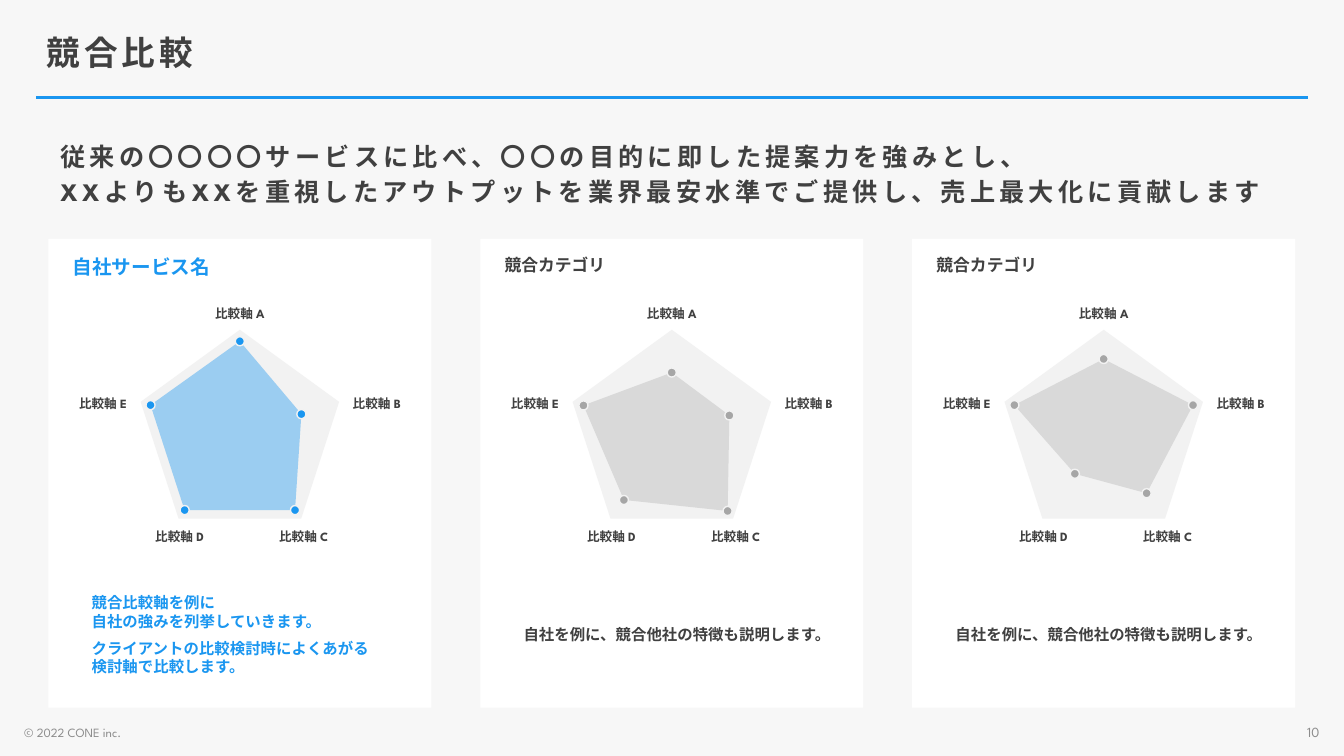
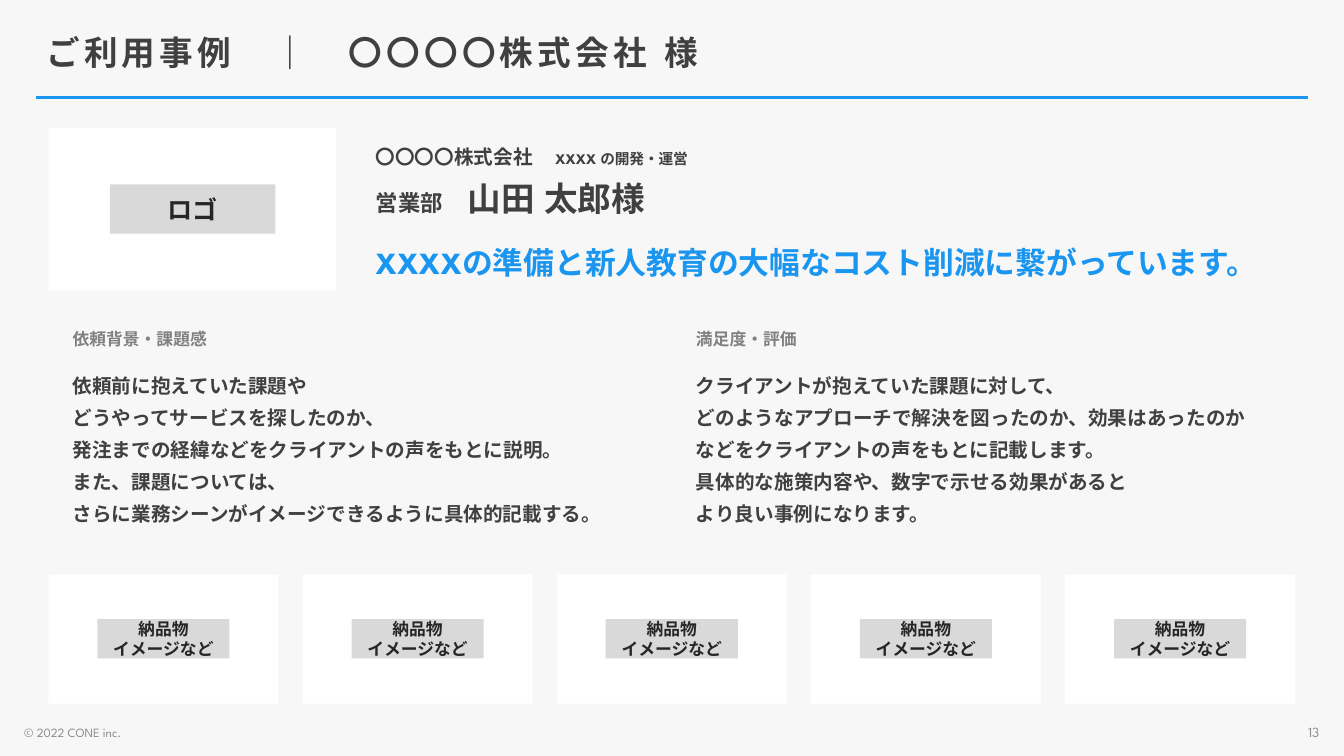
from dataclasses import dataclass
from math import cos, pi, sin

from lxml.etree import SubElement
from pptx import Presentation
from pptx.dml.color import RGBColor as RGB
from pptx.enum.shapes import MSO_CONNECTOR as Connector, MSO_SHAPE as Preset
from pptx.enum.text import MSO_ANCHOR as Anchor, PP_ALIGN as Align
from pptx.oxml.ns import qn
from pptx.util import Cm, Pt


@dataclass(frozen=True)
class Theme:
    font: str = "League Spartan"
    label_font: str = "Noto Sans CJK JP"
    background: RGB = RGB(0xF7, 0xF7, 0xF7)
    accent: RGB = RGB(0x1A, 0x96, 0xF0)
    text: RGB = RGB(0x40, 0x40, 0x40)
    label: RGB = RGB(0x26, 0x26, 0x26)
    heading: RGB = RGB(0x80, 0x80, 0x80)
    footer: RGB = RGB(0x8C, 0x8C, 0x8C)
    white: RGB = RGB(0xFF, 0xFF, 0xFF)
    pale: RGB = RGB(0xF2, 0xF2, 0xF2)
    gray: RGB = RGB(0xD9, 0xD9, 0xD9)
    dot: RGB = RGB(0xA6, 0xA6, 0xA6)
    title_size: float = 24
    message_size: float = 18
    lead_size: float = 22
    body_size: float = 14
    small_size: float = 12
    note_size: float = 11
    axis_size: float = 9
    page_size: float = 10


theme = Theme()


@dataclass
class Para:
    """A paragraph; text is a string, or a list of (text, size) runs."""
    text: str | list
    size: float = theme.body_size
    color: RGB = theme.text
    before: float = 0
    bold: bool = True
    font: str = theme.font
    tracking: float = 0
    line_spacing: float | None = None


def add_box(shapes, left, top, width, height, paragraphs=(), fill=None,
            margins=(0.25, 0.13, 0.25, 0.13), anchor=Anchor.MIDDLE,
            align=Align.LEFT, preset=Preset.RECTANGLE):
    """Add a preset shape, or a text box when there is no fill. Lengths in cm."""
    frame = [Cm(length) for length in (left, top, width, height)]
    if fill is None:
        shape = shapes.add_textbox(*frame)
    else:
        shape = shapes.add_shape(preset, *frame)
        shape.shadow.inherit = False
        shape.fill.solid()
        shape.fill.fore_color.rgb = fill
        shape.line.fill.background()
    text_frame = shape.text_frame
    text_frame.word_wrap = True
    text_frame.vertical_anchor = anchor
    (text_frame.margin_left, text_frame.margin_top,
     text_frame.margin_right, text_frame.margin_bottom) = map(Cm, margins)

    for index, item in enumerate(paragraphs):
        paragraph = text_frame.add_paragraph() if index else text_frame.paragraphs[0]
        paragraph.alignment = align
        if item.line_spacing:
            paragraph.line_spacing = item.line_spacing
        if item.before:
            paragraph.space_before = Pt(item.before)
        font = paragraph.font
        font.name, font.bold, font.color.rgb = item.font, item.bold, item.color
        if isinstance(item.text, str):
            paragraph.text = item.text
            font.size = Pt(item.size)
        else:
            for text, size in item.text:
                run = paragraph.add_run()
                run.text = text
                run.font.size = Pt(size)
        properties = paragraph._p.pPr.find(qn("a:defRPr"))
        properties.set("lang", "ja-JP")
        if item.tracking:
            properties.set("spc", str(int(item.tracking * 100)))
        SubElement(properties, qn("a:ea")).set("typeface", item.font)
    return shape


def start_slide(presentation, title, number):
    """Add a slide with the background, title, rule and footer."""
    slide = presentation.slides.add_slide(presentation.slide_layouts[6])
    slide.background.fill.solid()
    slide.background.fill.fore_color.rgb = theme.background
    rule = slide.shapes.add_connector(Connector.STRAIGHT, Cm(0.91), Cm(2.46), Cm(32.97), Cm(2.46))
    rule.line.color.rgb = theme.accent
    rule.line.width = Pt(2)
    SubElement(rule._element.spPr, qn("a:effectLst"))
    add_box(slide.shapes, 0.92, 0.53, 31.8, 1.6,
            [Para(title, theme.title_size, tracking=3, line_spacing=0.9)],
            margins=(0.25, 0.2, 0.25, 0.13))
    footers = [(0.36, "© 2022 CONE inc.", theme.axis_size, Align.LEFT),
               (25.88, number, theme.page_size, Align.RIGHT)]
    for left, text, size, align in footers:
        add_box(slide.shapes, left, 18.11, 7.62, 0.69,
                [Para(text, size, theme.footer, bold=False)], align=align)
    return slide


presentation = Presentation()
presentation.slide_width, presentation.slide_height = Cm(33.87), Cm(19.05)
content_left, content_width = 1.22, 31.42

# Competitor comparison
slide = start_slide(presentation, "競合比較", "10")
message = ["従来の〇〇〇〇サービスに比べ、〇〇の目的に即した提案力を強みとし、",
           "XXよりもXXを重視したアウトプットを業界最安水準でご提供し、売上最大化に貢献します"]
add_box(slide.shapes, 1.27, 3.23, 31.5, 2.31,
        [Para(line, theme.message_size, before=6 * index, tracking=3, line_spacing=0.9)
         for index, line in enumerate(message)],
        margins=(0.25, 0.41, 0.25, 0.13), anchor=Anchor.TOP)

competitor_note = [Para("自社を例に、競合他社の特徴も説明します。", theme.note_size)]
own_notes = [
    Para("競合比較軸を例に\n自社の強みを列挙していきます。", theme.note_size, theme.accent),
    Para("クライアントの比較検討時によくあがる\n検討軸で比較します。",
         theme.note_size, theme.accent, before=6),
]
# Scores run clockwise from axis A, as a share of the radius.
services = [
    (Para("自社サービス名", theme.body_size, theme.accent), own_notes,
     (0.89, 0.62, 0.9, 0.9, 0.9), theme.accent, theme.accent, 40),
    (Para("競合カテゴリ", theme.small_size), competitor_note,
     (0.59, 0.58, 0.91, 0.78, 0.89), theme.gray, theme.dot, 100),
    (Para("競合カテゴリ", theme.small_size), competitor_note,
     (0.72, 0.9, 0.7, 0.47, 0.9), theme.gray, theme.dot, 100),
]
axis_labels = [("A", 0, 7.59), ("B", 3.45, 9.86), ("C", 1.61, 13.21),
               ("D", -1.52, 13.21), ("E", -3.45, 9.86)]
card_width = 9.65
card_step = (content_width - card_width) / (len(services) - 1)
radius, radar_y, dot_size, label_width = 2.63, 10.94, 0.23, 2.26

for index, (name, notes, scores, area_color, dot_color, opacity) in enumerate(services):
    card_left = content_left + index * card_step
    radar_x = card_left + card_width / 2
    add_box(slide.shapes, card_left, 6.02, card_width, 11.81, [name], theme.white,
            margins=(0.61, 0.41, 0.25, 0.99), anchor=Anchor.TOP)
    half_width = radius * sin(2 * pi / 5)
    add_box(slide.shapes, radar_x - half_width, radar_y - radius, 2 * half_width,
            radius * (1 + cos(pi / 5)), fill=theme.pale, preset=Preset.REGULAR_PENTAGON)
    for letter, offset, top in axis_labels:
        add_box(slide.shapes, radar_x + offset - label_width / 2, top, label_width, 0.61,
                [Para(f"比較軸 {letter}", theme.axis_size)],
                margins=(0.25, 0.2, 0.25, 0.2), align=Align.CENTER)

    points = [(radar_x + score * radius * sin(2 * pi * axis / 5),
               radar_y - score * radius * cos(2 * pi * axis / 5))
              for axis, score in enumerate(scores)]
    corners = [(Cm(x), Cm(y)) for x, y in points]
    builder = slide.shapes.build_freeform(*corners[0])
    builder.add_line_segments(corners[1:], close=True)
    area = builder.convert_to_shape()
    area.shadow.inherit = False
    area.fill.solid()
    area.fill.fore_color.rgb = area_color
    area.line.fill.background()
    if opacity < 100:
        color = area._element.spPr.find(qn("a:solidFill")).find(qn("a:srgbClr"))
        SubElement(color, qn("a:alpha")).set("val", str(opacity * 1000))
    for x, y in points:
        dot = add_box(slide.shapes, x - dot_size / 2, y - dot_size / 2, dot_size, dot_size,
                      fill=dot_color, preset=Preset.OVAL)
        dot.line.color.rgb = theme.pale
        dot.line.width = Pt(1)
    add_box(slide.shapes, card_left, 14.43, card_width, 3.02, notes,
            margins=(1.09, 0.2, 0.25, 0.1))

# Customer case
slide = start_slide(presentation, "ご利用事例　｜　〇〇〇〇株式会社 様", "13")
add_box(slide.shapes, content_left, 3.23, 7.26, 4.09, fill=theme.white)
add_box(slide.shapes, 2.77, 4.65, 4.17, 1.24,
        [Para("ロゴ", theme.message_size, theme.label, font=theme.label_font)],
        theme.gray, align=Align.CENTER)
add_box(slide.shapes, 8.86, 3.23, 23.77, 4.09, [
    Para([("〇〇〇〇株式会社", 14), ("　", 16), ("XXXX の開発・運営", 10.5)]),
    Para([("営業部", 16), ("　", 18), ("山田 太郎様", 24)], before=6),
    Para("XXXXの準備と新人教育の大幅なコスト削減に繋がっています。",
         theme.lead_size, theme.accent, before=18),
], margins=(0.61, 0.2, 0.25, 0.1))

columns = [
    ("依頼背景・課題感", [
        "依頼前に抱えていた課題や",
        "どうやってサービスを探したのか、",
        "発注までの経緯などをクライアントの声をもとに説明。",
        "また、課題については、",
        "さらに業務シーンがイメージできるように具体的記載する。"]),
    ("満足度・評価", [
        "クライアントが抱えていた課題に対して、",
        "どのようなアプローチで解決を図ったのか、効果はあったのか",
        "などをクライアントの声をもとに記載します。",
        "具体的な施策内容や、数字で示せる効果があると",
        "より良い事例になります。"]),
]
column_width = content_width / len(columns)
for index, (heading, lines) in enumerate(columns):
    paragraphs = [Para(heading, theme.small_size, theme.heading)]
    paragraphs += [Para(line, before=6 if row else 18) for row, line in enumerate(lines)]
    add_box(slide.shapes, content_left + index * column_width, 7.87, column_width, 6.2,
            paragraphs, margins=(0.61, 0.41, 0.25, 0.1), anchor=Anchor.TOP)

deliverable_count, tile_width, tag_width = 5, 5.8, 3.33
tile_step = (content_width - tile_width) / (deliverable_count - 1)
for index in range(deliverable_count):
    tile_left = content_left + index * tile_step
    group = slide.shapes.add_group_shape()
    add_box(group.shapes, tile_left, 14.48, tile_width, 3.25, fill=theme.white)
    add_box(group.shapes, tile_left + (tile_width - tag_width) / 2, 15.6, tag_width, 0.99,
            [Para(line, theme.small_size, theme.label, font=theme.label_font)
             for line in ("納品物", "イメージなど")],
            theme.gray, align=Align.CENTER)

presentation.save("out.pptx")
